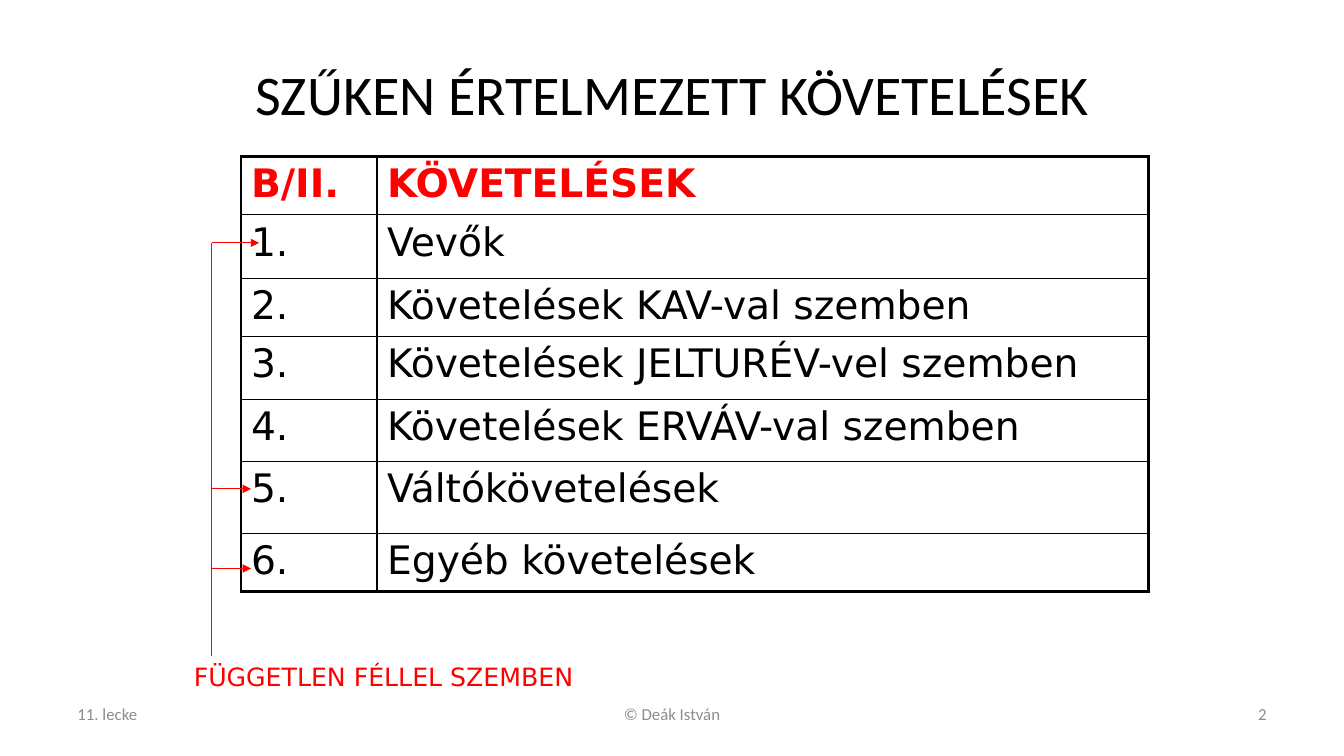
from dataclasses import dataclass

from lxml.etree import SubElement
from pptx import Presentation
from pptx.dml.color import RGBColor
from pptx.enum.shapes import MSO_CONNECTOR
from pptx.enum.text import MSO_ANCHOR, PP_ALIGN
from pptx.oxml import parse_xml
from pptx.oxml.ns import nsdecls, qn
from pptx.util import Inches, Pt


@dataclass(frozen=True)
class Theme:
    black: str = "000000"
    red: str = "FF0000"
    grey: str = "8C8C8C"
    heading_font: str = "Calibri"
    body_font: str = "DejaVu Sans"
    title_size: float = 40
    table_size: float = 28
    note_size: float = 18
    footer_size: float = 12
    outer_line: float = 2.25
    inner_line: float = 1
    arrow_line: float = 0.75


THEME = Theme()
WIDTH, HEIGHT = 13.33, 7.5
MARGIN = 0.67
CONTENT_WIDTH = WIDTH - 2 * MARGIN

COLUMN_SHARES = (0.15, 0.85)
ROW_HEIGHTS = (0.58, 0.63, 0.58, 0.62, 0.62, 0.71, 0.58)
ROWS = (
    ("B/II.", "KÖVETELÉSEK"),
    ("1.", "Vevők"),
    ("2.", "Követelések KAV-val szemben"),
    ("3.", "Követelések JELTURÉV-vel szemben"),
    ("4.", "Követelések ERVÁV-val szemben"),
    ("5.", "Váltókövetelések"),
    ("6.", "Egyéb követelések"),
)
# Row number: (arrow's drop below the row's top, its reach past the table's edge)
INDEPENDENT_ROWS = {1: (0.28, 0.18), 5: (0.27, 0.1), 6: (0.35, 0.1)}


def add_run(paragraph, text, font, size, color, bold=False):
    run = paragraph.add_run()
    run.text = text
    run.font.name = font
    run.font.size = Pt(size)
    run.font.bold = bold
    run.font.color.rgb = RGBColor.from_string(color)


def add_text(slide, box, text, font, size, color, align, anchor=MSO_ANCHOR.MIDDLE, wrap=True):
    frame = slide.shapes.add_textbox(*map(Inches, box)).text_frame
    frame.word_wrap = wrap
    frame.vertical_anchor = anchor
    paragraph = frame.paragraphs[0]
    paragraph.alignment = align
    add_run(paragraph, text, font, size, color)


def set_borders(cell, widths):
    """Takes the widths in the order left, right, top, bottom."""
    properties = cell._tc.get_or_add_tcPr()
    for position, (side, width) in enumerate(zip("LRTB", widths)):
        properties.insert(position, parse_xml(
            f'<a:ln{side} {nsdecls("a")} w="{Pt(width)}"><a:solidFill>'
            f'<a:srgbClr val="{THEME.black}"/></a:solidFill></a:ln{side}>'))


def add_line(slide, start, end, arrow=False):
    line = slide.shapes.add_connector(
        MSO_CONNECTOR.STRAIGHT, *map(Inches, (*start, *end)))
    line.line.color.rgb = RGBColor.from_string(THEME.red)
    line.line.width = Pt(THEME.arrow_line)
    if arrow:
        SubElement(line.line._get_or_add_ln(), qn("a:tailEnd"), type="triangle")
    SubElement(line._element.spPr, qn("a:effectLst"))


def add_claims_table(slide, box):
    width = box[2]
    table = slide.shapes.add_table(
        len(ROWS), len(COLUMN_SHARES), *map(Inches, box)).table
    table.first_row = table.horz_banding = False
    for column, share in zip(table.columns, COLUMN_SHARES):
        column.width = Inches(width * share)
    for row, height in zip(table.rows, ROW_HEIGHTS):
        row.height = Inches(height)

    last_row, last_column = len(ROWS) - 1, len(COLUMN_SHARES) - 1
    for i, texts in enumerate(ROWS):
        for j, text in enumerate(texts):
            cell = table.cell(i, j)
            cell.fill.background()
            on_edge = (j == 0, j == last_column, i == 0, i == last_row)
            set_borders(cell, [THEME.outer_line if edge else THEME.inner_line
                               for edge in on_edge])
            add_run(cell.text_frame.paragraphs[0], text, THEME.body_font,
                    THEME.table_size, THEME.red if i == 0 else THEME.black, bold=i == 0)


def add_independent_party_note(slide, box, table_left, table_top):
    """Labels the independent-party rows and points to each from one trunk line."""
    left, top = box[:2]
    add_text(slide, box, "FÜGGETLEN FÉLLEL SZEMBEN", THEME.body_font, THEME.note_size,
             THEME.red, PP_ALIGN.CENTER, MSO_ANCHOR.TOP, wrap=False)
    trunk = left + 0.29
    arrows = [(table_top + sum(ROW_HEIGHTS[:row]) + drop, table_left + reach)
              for row, (drop, reach) in INDEPENDENT_ROWS.items()]
    add_line(slide, (trunk, top), (trunk, arrows[0][0]))
    for y, tip in arrows:
        add_line(slide, (trunk, y), (tip, y), arrow=True)


def add_footer(slide, box):
    left, top, width, height = box
    side, middle = 3.11, 4.22
    parts = (
        ("11. lecke", left, side, PP_ALIGN.LEFT),
        ("© Deák István", left + (width - middle) / 2, middle, PP_ALIGN.CENTER),
        ("2", left + width - side, side, PP_ALIGN.RIGHT),
    )
    for text, x, part_width, align in parts:
        add_text(slide, (x, top, part_width, height), text, THEME.heading_font,
                 THEME.footer_size, THEME.grey, align)


def main():
    presentation = Presentation()
    presentation.slide_width, presentation.slide_height = Inches(WIDTH), Inches(HEIGHT)
    slide = presentation.slides.add_slide(presentation.slide_layouts[6])

    add_text(slide, (MARGIN, 0.3, CONTENT_WIDTH, 1.25), "SZŰKEN ÉRTELMEZETT KÖVETELÉSEK",
             THEME.heading_font, THEME.title_size, THEME.black, PP_ALIGN.CENTER)
    table_left, table_top = 2.39, 1.55
    add_claims_table(slide, (table_left, table_top, 9, sum(ROW_HEIGHTS)))
    add_footer(slide, (MARGIN, 6.83, CONTENT_WIDTH, 0.5))
    add_independent_party_note(slide, (1.81, 6.51, 3.99, 0.4), table_left, table_top)
    presentation.save("out.pptx")


if __name__ == "__main__":
    main()
